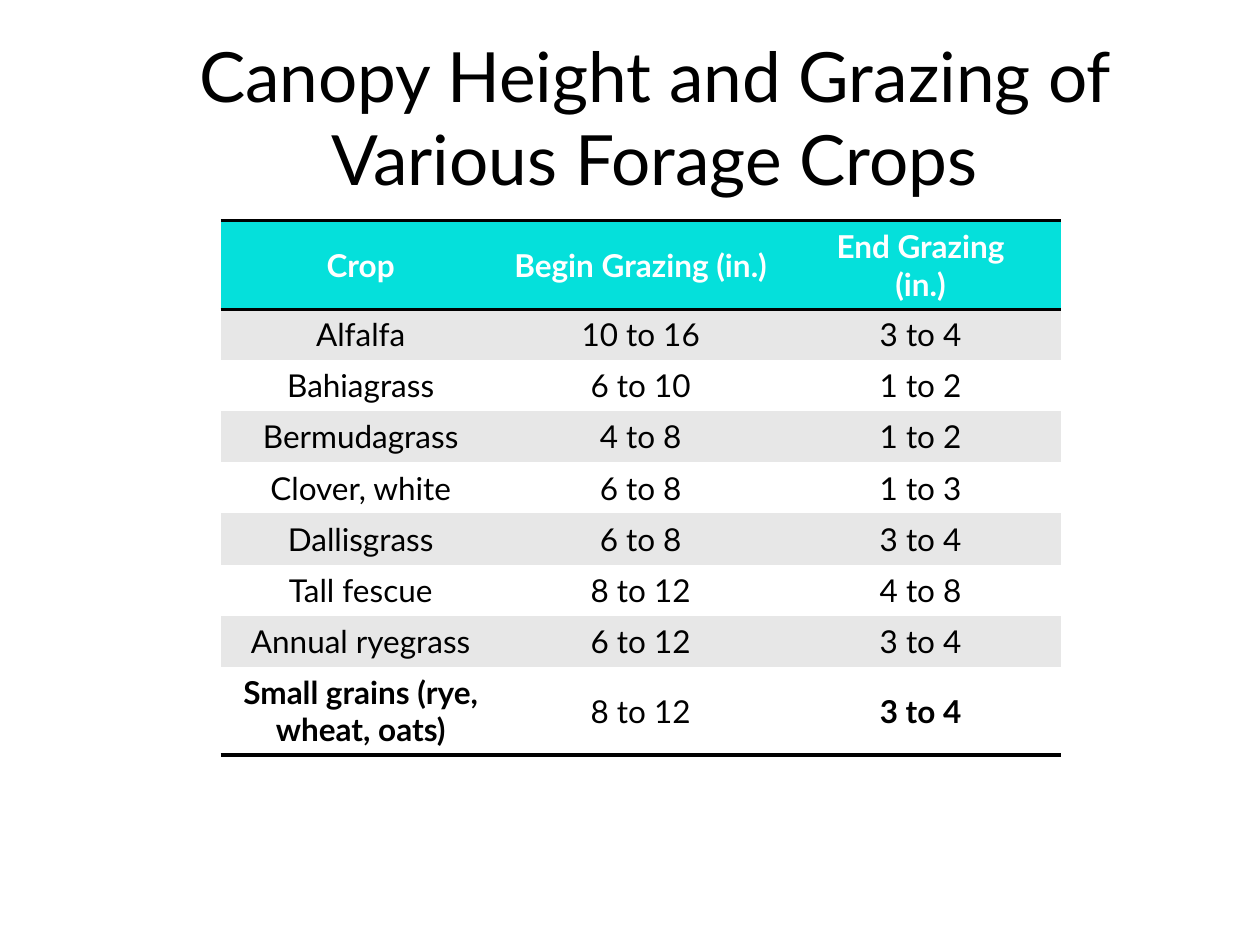
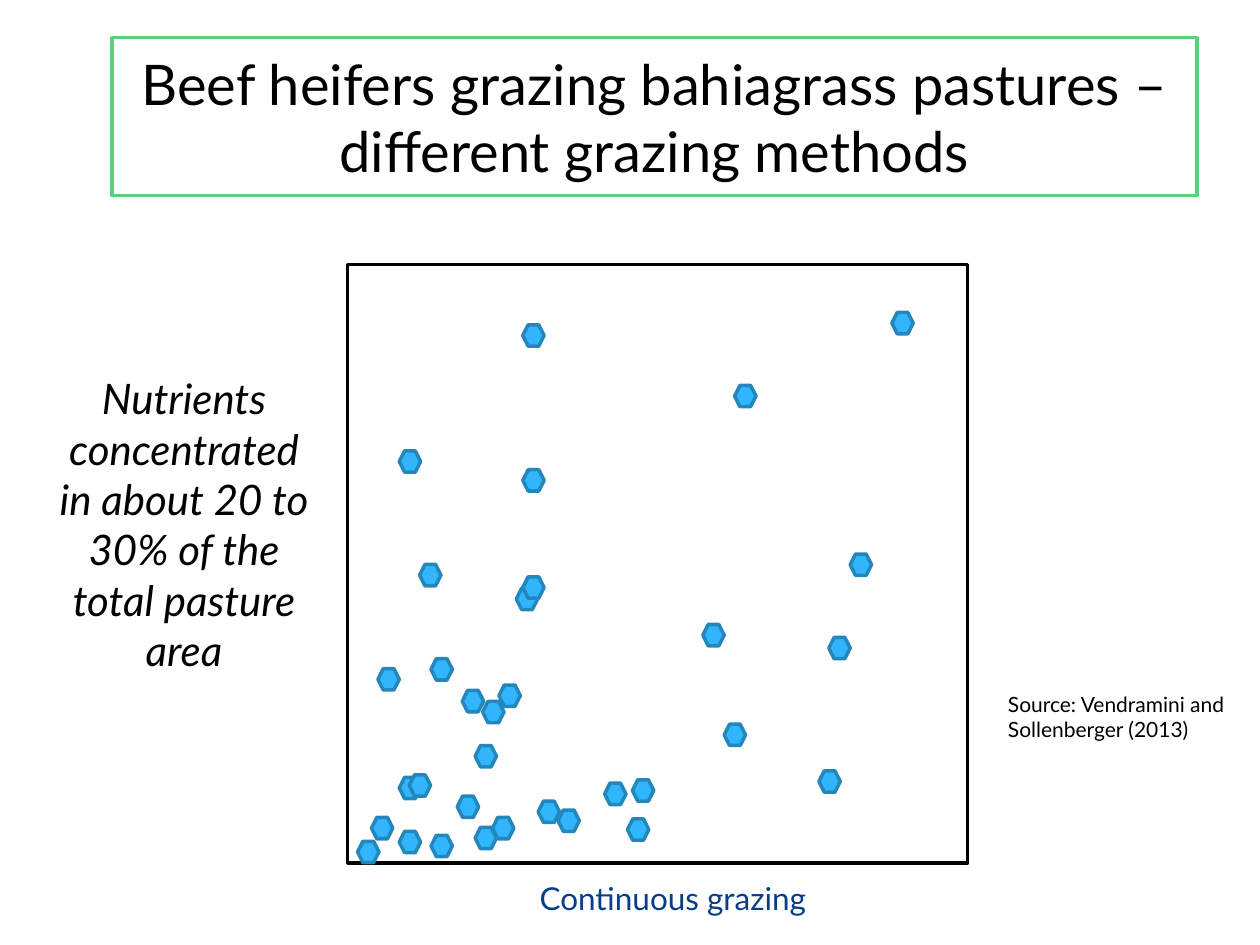
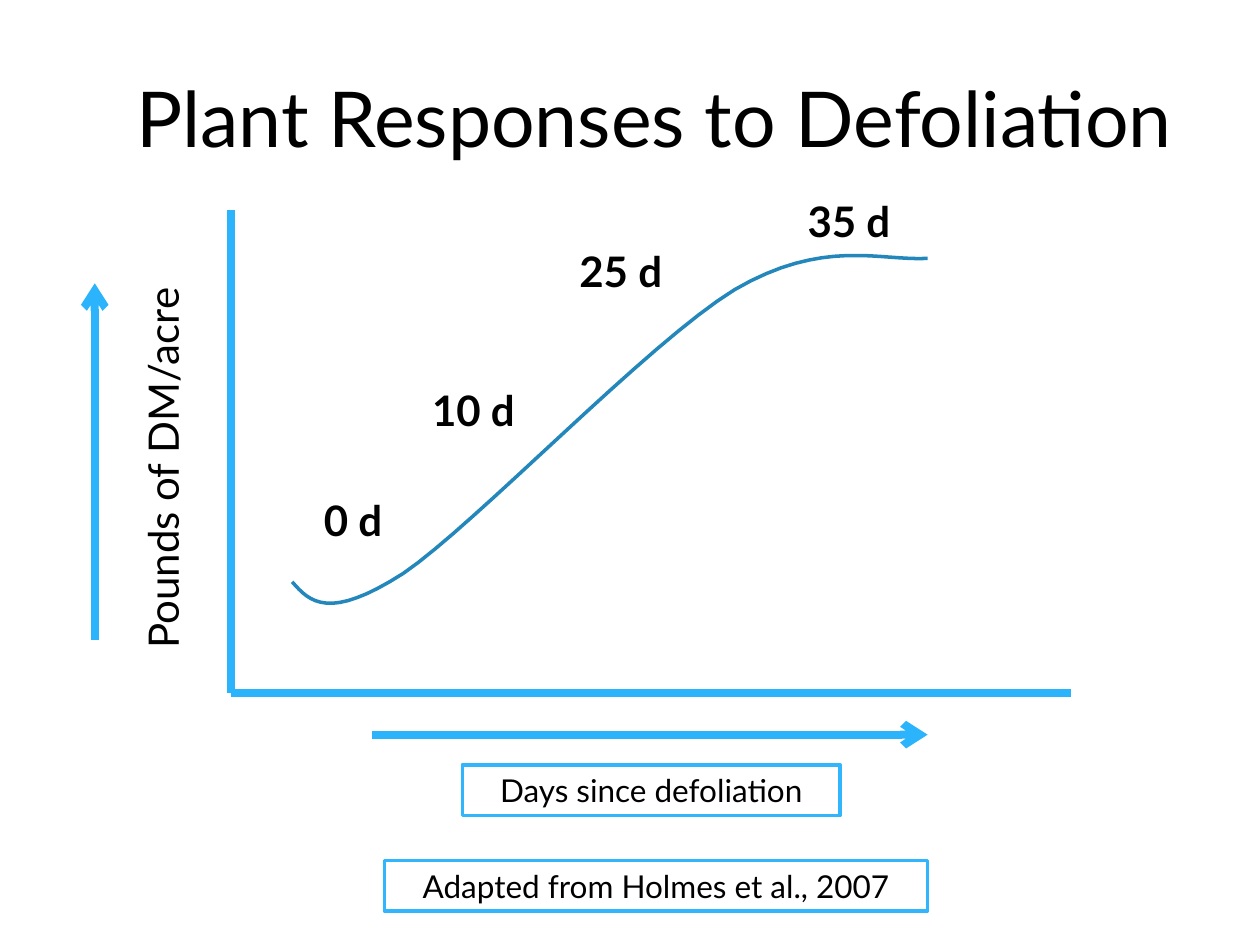
from lxml import etree
from pptx import Presentation
from pptx import util as u
from pptx.dml.color import RGBColor
from pptx.enum import shapes, text
from pptx.oxml.ns import qn

Cm, Pt = u.Cm, u.Pt
FONT = "Lato"
COLORS = {
    "black": "000000", "white": "FFFFFF", "header": "05E0DB", "band": "E7E7E7",
    "green": "5BD078", "sky": "31B6FD", "axis": "2BB4FC", "steel": "2487BB",
    "navy": "073E87",
}
TITLE_BOX = (2.26, 0.76, 21.87, 3.18)
LEFT, CENTER = text.PP_ALIGN.LEFT, text.PP_ALIGN.CENTER
NO_STYLE = "{2D5ABB26-0587-4C30-8999-92F81FD0307C}"

GRAZING_HEIGHTS = [
    ("Crop", "Begin Grazing (in.)", "End Grazing\n(in.)"),
    ("Alfalfa", "10 to 16", "3 to 4"),
    ("Bahiagrass", "6 to 10", "1 to 2"),
    ("Bermudagrass", "4 to 8", "1 to 2"),
    ("Clover, white", "6 to 8", "1 to 3"),
    ("Dallisgrass", "6 to 8", "3 to 4"),
    ("Tall fescue", "8 to 12", "4 to 8"),
    ("Annual ryegrass", "6 to 12", "3 to 4"),
    ("Small grains (rye, wheat, oats)", "8 to 12", "3 to 4"),
]
NUTRIENT_SPOTS = [
    (3.53, 1.22), (1.68, 11.51), (0.2, 11.63), (1.04, 3.76), (1.45, 6.05),
    (3.53, 4.14), (3.4, 6.53), (3.53, 6.3), (0.61, 8.15), (1.68, 7.95),
    (2.31, 8.59), (2.72, 8.81), (3.05, 8.48), (2.57, 9.7), (1.04, 10.34),
    (1.24, 10.29), (2.21, 10.72), (0.48, 11.15), (1.04, 11.43), (2.57, 11.35),
    (2.92, 11.15), (3.84, 10.82), (4.24, 11), (5.18, 10.46), (5.64, 11.18),
    (5.74, 10.39), (7.8, 2.44), (10.97, 0.97), (10.13, 5.84), (9.7, 7.52),
    (7.16, 7.26), (7.59, 9.27), (9.5, 10.21),
]
GROWTH_CURVE = [
    (1.24, 7.49), (1.6, 7.9), (1.98, 8.28), (3.48, 7.32), (4.95, 6.32),
    (8.41, 2.67), (10.16, 1.6), (11.94, 0.56), (13.08, 1.02), (14.05, 0.97),
]
DAY_LABELS = [("0 d", 1.63, 5.61), ("10 d", 3.81, 3.38),
              ("25 d", 6.78, 0.58), ("35 d", 11.38, -0.43)]


def rgb(name):
    return RGBColor.from_string(COLORS[name])


def lengths(box):
    return [Cm(value) for value in box]


def style_text(frame, size, color="black", align=LEFT, bold=False, italic=False):
    for para in frame.paragraphs:
        para.alignment = align
        for span in para.runs:
            font = span.font
            font.name, font.size = FONT, Pt(size)
            font.bold, font.italic = bold, italic
            font.color.rgb = rgb(color)


def paint(shape, fill=None, line=None, width=2):
    if fill:
        shape.fill.solid()
        shape.fill.fore_color.rgb = rgb(fill)
    else:
        shape.fill.background()
    if line:
        shape.line.color.rgb = rgb(line)
        shape.line.width = Pt(width)
    else:
        shape.line.fill.background()


def add_titled_page(deck, words, size):
    page = deck.slides.add_slide(deck.slide_layouts[5])
    title = page.shapes.title
    title.left, title.top, title.width, title.height = lengths(TITLE_BOX)
    frame = title.text_frame
    frame.text = words
    frame.word_wrap = True
    frame.auto_size = text.MSO_AUTO_SIZE.NONE
    frame.vertical_anchor = text.MSO_ANCHOR.MIDDLE
    style_text(frame, size, align=CENTER)
    return page


def add_label(page, words, box, size, fill=None, line=None, **style):
    label = page.shapes.add_textbox(*lengths(box))
    paint(label, fill, line)
    frame = label.text_frame
    frame.word_wrap = True
    frame.auto_size = text.MSO_AUTO_SIZE.SHAPE_TO_FIT_TEXT
    frame.text = words
    style_text(frame, size, **style)
    return label


def add_line(page, start, end, arrow=False):
    line = page.shapes.add_connector(shapes.MSO_CONNECTOR.STRAIGHT,
                                     *lengths(start + end))
    line.line.color.rgb = rgb("axis")
    line.line.width = Pt(4.5)
    if arrow:
        etree.SubElement(line.line._get_or_add_ln(), qn("a:tailEnd"), type="arrow")
    etree.SubElement(line._element.spPr, qn("a:effectLst"))


def add_cell_rule(cell, side):
    """Draw a black rule on a cell; call it before the cell gets its fill."""
    rule = etree.SubElement(cell._tc.get_or_add_tcPr(), qn(f"a:ln{side}"),
                            w=str(Pt(2)))
    fill = etree.SubElement(rule, qn("a:solidFill"))
    etree.SubElement(fill, qn("a:srgbClr"), val=COLORS["black"])


def add_crop_table(page, box, rows):
    last = len(rows) - 1
    table = page.shapes.add_table(len(rows), len(rows[0]), *lengths(box)).table
    table._tbl.tblPr.find(qn("a:tableStyleId")).text = NO_STYLE
    table.horz_banding = False
    for column in table.columns:
        column.width = Cm(box[2] / len(rows[0]))
    for r, row in enumerate(rows):
        table.rows[r].height = Cm(1.78 if r in (0, last) else 1.03)
        for c, words in enumerate(row):
            cell = table.cell(r, c)
            cell.text = words
            cell.vertical_anchor = text.MSO_ANCHOR.MIDDLE
            bold = r == 0 or (r == last and c != 1)
            style_text(cell.text_frame, 18, "black" if r else "white", CENTER, bold)
            if r == 0:
                add_cell_rule(cell, "T")
            if r in (0, last):
                add_cell_rule(cell, "B")
            cell.fill.solid()
            band = "band" if r % 2 else "white"
            cell.fill.fore_color.rgb = rgb(band if r else "header")


def add_pasture(page, box, spots):
    left, top = box[:2]
    pasture = page.shapes.add_shape(shapes.MSO_SHAPE.RECTANGLE, *lengths(box))
    pasture.shadow.inherit = False
    paint(pasture, "white", "black")
    for x, y in spots:
        spot = page.shapes.add_shape(shapes.MSO_SHAPE.HEXAGON,
                                     *lengths((left + x, top + y, 0.43, 0.43)))
        spot.shadow.inherit = False
        paint(spot, "sky", "steel")


def bezier_points(controls, steps=16):
    """Sample a chain of cubic curves that share their end points."""
    points = [controls[0]]
    for i in range(0, len(controls) - 1, 3):
        for step in range(1, steps + 1):
            t = step / steps
            weights = ((1 - t) ** 3, 3 * t * (1 - t) ** 2, 3 * t * t * (1 - t), t ** 3)
            points.append(tuple(
                sum(w * point[axis] for w, point in zip(weights, controls[i:i + 4]))
                for axis in (0, 1)))
    return points


def add_growth_plot(page, box):
    left, top, width, height = box

    def at(x, y, *size):
        return (left + x, top + y, *size)

    add_line(page, at(0, 0), at(0, height))
    add_line(page, at(0, height), at(width, height))

    first, *rest = [lengths(at(x, y)) for x, y in bezier_points(GROWTH_CURVE)]
    builder = page.shapes.build_freeform(*first)
    builder.add_line_segments(rest, close=False)
    curve = builder.convert_to_shape()
    curve.shadow.inherit = False
    paint(curve, line="steel")

    y_label = add_label(page, "Pounds of DM/acre", at(-5.61, 4.22, 8.46, 1.27), 24)
    y_label.rotation = 270
    add_line(page, at(-2.74, 8.66), at(-2.74, 1.47), arrow=True)
    add_line(page, at(2.84, 10.57), at(14.05, 10.57), arrow=True)
    for words, x, y in DAY_LABELS:
        add_label(page, words, at(x, y, 2.95, 1.27), 24, bold=True)
    for words, label_box in (
            ("Days since defoliation", at(4.67, 11.18, 7.62, 1.02)),
            ("Adapted from Holmes et al., 2007", at(3.1, 13.11, 10.95, 1.02))):
        add_label(page, words, label_box, 18, "white", "sky", align=CENTER)


def build_canopy_page(deck):
    page = add_titled_page(
        deck, "Canopy Height and Grazing of Various Forage Crops", 39.6)
    add_crop_table(page, (4.45, 4.45, 16.93, 10.77), GRAZING_HEIGHTS)


def build_pasture_page(deck):
    page = add_titled_page(
        deck, "Beef heifers grazing bahiagrass pastures – different grazing methods", 32)
    paint(page.shapes.title, "white", "green")
    add_pasture(page, (7.01, 5.33, 12.5, 12.07), NUTRIENT_SPOTS)
    add_label(page, "Continuous grazing", (8.89, 17.6, 9.35, 1.02), 18, "white",
              color="navy", align=CENTER)
    add_label(page, "Source: Vendramini and Sollenberger (2013)",
              (20.07, 13.82, 5.08, 1.27), 12)
    add_label(page, "Nutrients concentrated in about 20 to 30% of the total pasture area",
              (0.84, 7.39, 5.74, 6.4), 24, align=CENTER, italic=True)


def build_defoliation_page(deck):
    page = add_titled_page(deck, "Plant Responses to Defoliation", 44)
    add_growth_plot(page, (4.65, 4.24, 16.94, 9.73))


def main():
    deck = Presentation()
    deck.slide_width, deck.slide_height = Cm(25.4), Cm(19.05)
    build_canopy_page(deck)
    build_pasture_page(deck)
    build_defoliation_page(deck)
    deck.save("out.pptx")


if __name__ == "__main__":
    main()
